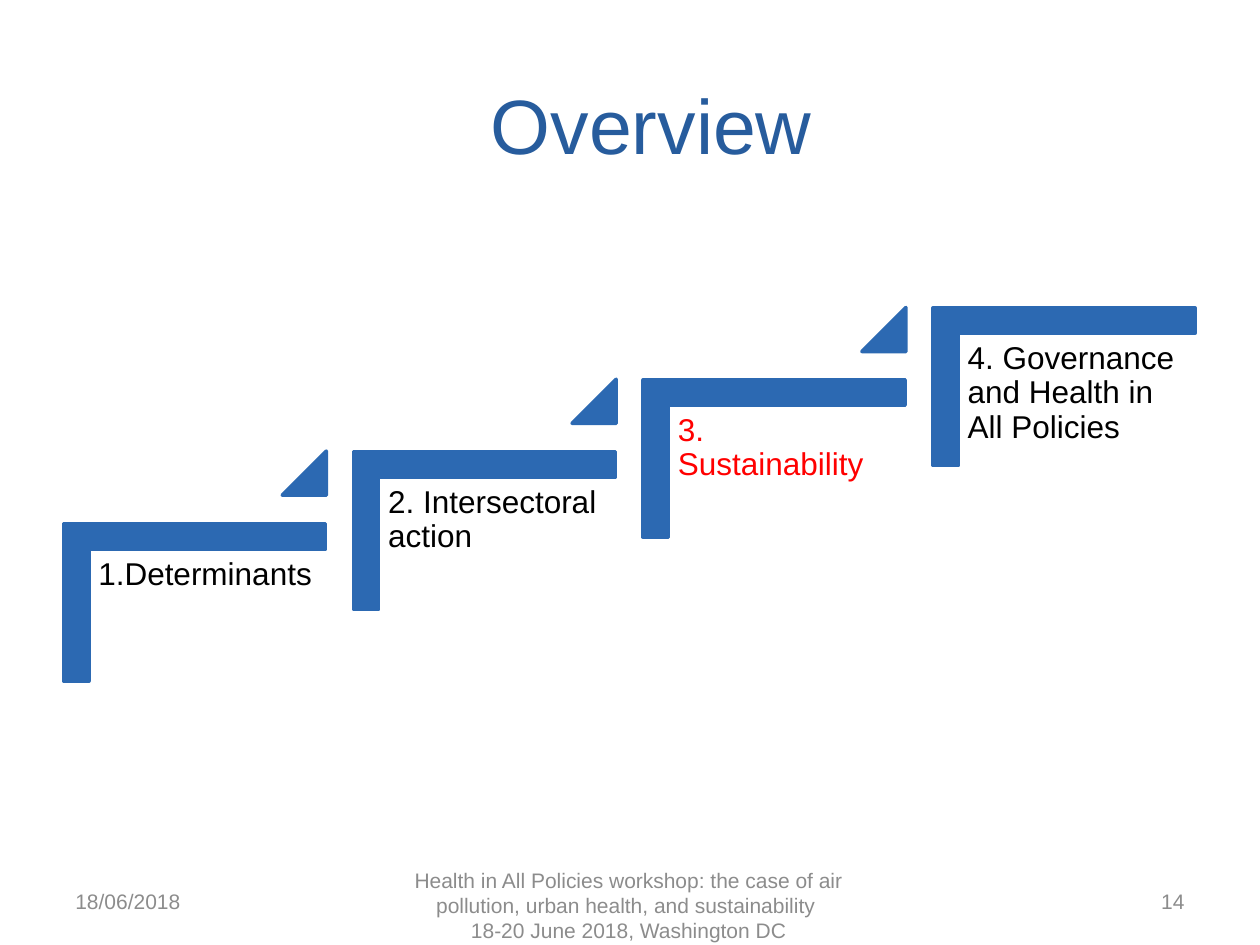
import dataclasses

import pptx
import pptx.dml.color
import pptx.enum.shapes
import pptx.enum.text
import pptx.util

Inches = pptx.util.Inches
Pt = pptx.util.Pt
RGB = pptx.dml.color.RGBColor.from_string
SHAPE = pptx.enum.shapes.MSO_SHAPE
ALIGN = pptx.enum.text.PP_ALIGN
ANCHOR = pptx.enum.text.MSO_ANCHOR


@dataclasses.dataclass(frozen=True)
class Theme:
    font: str = "Arial"
    title: str = "275C9D"
    step: str = "2C69B2"
    label: str = "000000"
    current: str = "FF0000"
    footer: str = "8C8C8C"
    title_size: int = 44
    label_size: int = 18
    footer_size: int = 12


THEME = Theme()

STEPS = [
    ("1.Determinants", THEME.label),
    ("2. Intersectoral action", THEME.label),
    ("3. Sustainability", THEME.current),
    ("4. Governance and Health in All Policies", THEME.label),
]
STEP_DX, STEP_DY = 2.3, -0.57


def add_text(shapes, box, lines, size, color, align=ALIGN.LEFT, anchor=ANCHOR.MIDDLE):
    tb = shapes.add_textbox(*map(Inches, box))
    tf = tb.text_frame
    tf.word_wrap = True
    tf.vertical_anchor = anchor
    p = tf.paragraphs[0]
    p.alignment = align
    for i, line in enumerate(lines):
        if i:
            p.add_line_break()
        r = p.add_run()
        r.text = line
        r.font.name = THEME.font
        r.font.size = Pt(size)
        r.font.color.rgb = RGB(color)
    return tf


def add_solid(shapes, kind, box, adjustments, rotation=0):
    sp = shapes.add_shape(kind, *map(Inches, box))
    sp.shadow.inherit = False
    sp.rotation = rotation
    for i, value in enumerate(adjustments):
        sp.adjustments[i] = value
    sp.fill.solid()
    sp.fill.fore_color.rgb = RGB(THEME.step)
    sp.line.color.rgb = RGB(THEME.step)
    sp.line.width = Pt(2)


def add_step(shapes, x, y, label, color, has_next):
    add_solid(shapes, SHAPE.CORNER, (x + 0.21, y, 1.25, 2.08), (0.16, 0.16), 90)
    tf = add_text(shapes, (x, y + 0.62, 1.88, 1.65), [label],
                  THEME.label_size, color, anchor=ANCHOR.TOP)
    tf.margin_left = tf.margin_right = tf.margin_top = tf.margin_bottom = Inches(0.07)
    tf.paragraphs[0].line_spacing = 0.9
    if has_next:
        add_solid(shapes, SHAPE.ISOSCELES_TRIANGLE, (x + 1.53, y - 0.16, 0.35, 0.35), (1,))


def add_staircase(s):
    group = s.shapes.add_group_shape()
    for i, (label, color) in enumerate(STEPS):
        add_step(group.shapes, 0.71 + i * STEP_DX, 3.74 + i * STEP_DY,
                 label, color, i < len(STEPS) - 1)


def add_footer(s):
    workshop = [
        "Health in All Policies workshop: the case of air pollution, "
        "urban health, and sustainability ",
        "18-20 June 2018, Washington DC",
    ]
    for box, lines, align in [
        ((3.1, 6.98, 3.78, 0.41), workshop, ALIGN.CENTER),
        ((0.5, 6.95, 2.33, 0.4), ["18/06/2018"], ALIGN.LEFT),
        ((7.17, 6.95, 2.33, 0.4), ["14"], ALIGN.RIGHT),
    ]:
        add_text(s.shapes, box, lines, THEME.footer_size, THEME.footer, align)


def main():
    prs = pptx.Presentation()
    prs.slide_width, prs.slide_height = Inches(10), Inches(7.5)
    s = prs.slides.add_slide(prs.slide_layouts[6])
    add_footer(s)
    add_text(s.shapes, (0.67, 0.36, 9, 1.25), ["Overview"],
             THEME.title_size, THEME.title, ALIGN.CENTER)
    add_staircase(s)
    prs.save("out.pptx")


if __name__ == "__main__":
    main()
